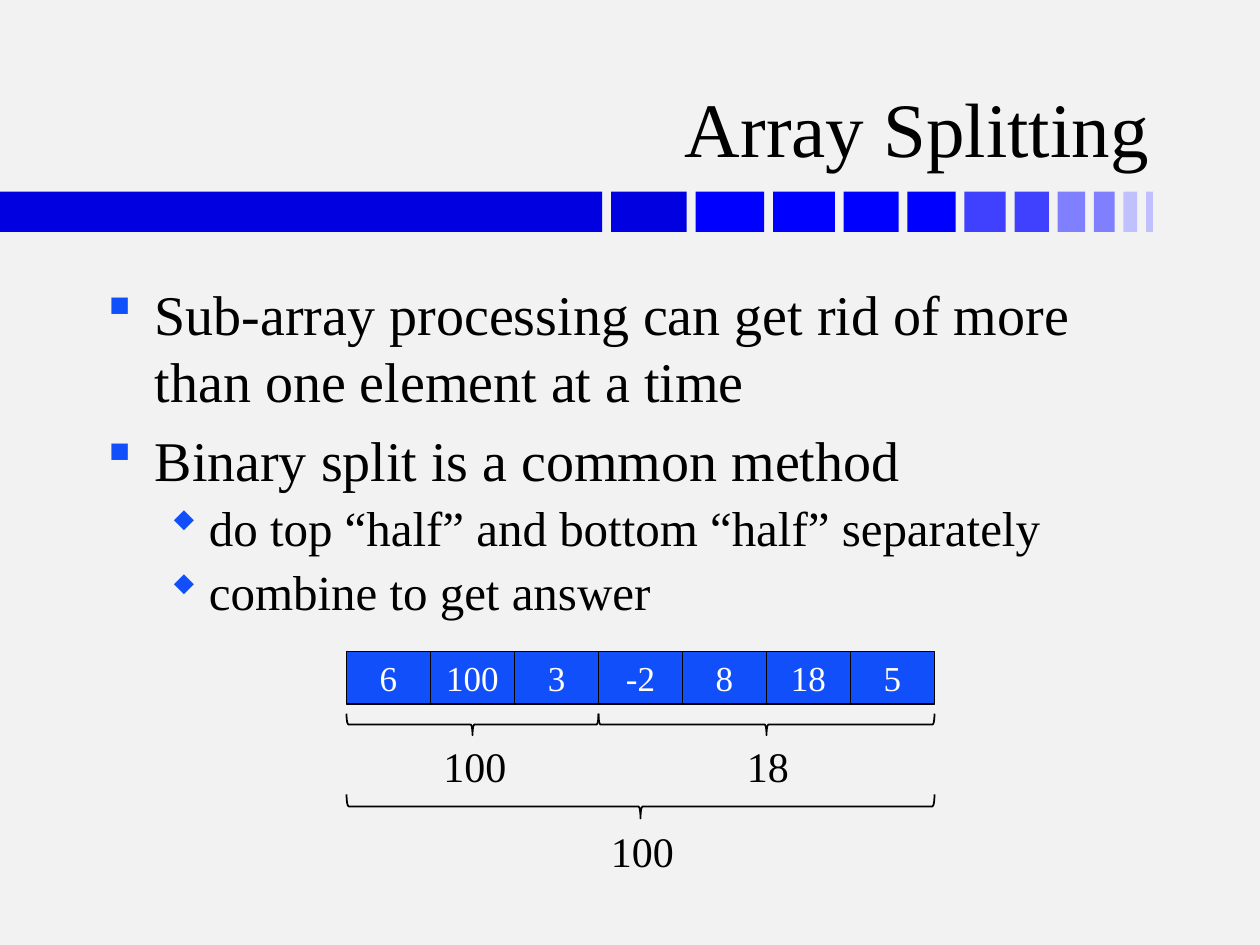
import pptx
import pptx.util
import pptx.dml.color
import pptx.enum.shapes
import pptx.enum.text
import pptx.oxml.ns
import lxml.etree

Inch = pptx.util.Inches
Point = pptx.util.Pt
Shape = pptx.enum.shapes.MSO_SHAPE
Align = pptx.enum.text.PP_ALIGN
Anchor = pptx.enum.text.MSO_ANCHOR

FONT, SYMBOL = "Times New Roman", "Wingdings"
BLACK, WHITE, BLUE, GREY = "000000", "FFFFFF", "114FFB", "F2F2F2"
FADE = ["C0C0FF", "8080FF", "4040FF", "0000FF", "0000FF", "0000E0"]
CELL, LEFT = 2 / 3, 2.75
VALUES = ["6", "100", "3", "-2", "8", "18", "5"]
BRACES = [(0, 3, 5.75, 0.17), (3, 4, 5.75, 0.17), (0, 7, 6.4, 0.19)]
LABELS = [("100", 3.42, 5.83, 0.71), ("18", 5.83, 5.83, 0.54), ("100", 4.75, 6.5, 0.71)]
POINTS = [
    (0, "Sub-array processing can get rid of more than one element at a time"),
    (0, "Binary split is a common method"),
    (1, "do top “half” and bottom “half” separately"),
    (1, "combine to get answer"),
]
LEVELS = [("§", 32, 0.2, 0.38, 0.38), ("w", 28, 0.1, 0.81, 0.31)]


def paint(form, color):
    form.solid()
    form.fore_color.rgb = pptx.dml.color.RGBColor.from_string(color)


def write(para, text, size, color=BLACK):
    run = para.add_run()
    run.text = text
    run.font.name = FONT
    run.font.size = Point(size)
    paint(run.font.fill, color)


def draw(slide, kind, box, fill=None, line=None):
    shape = slide.shapes.add_shape(kind, *map(Inch, box))
    shape.shadow.inherit = False
    if fill:
        paint(shape.fill, fill)
    else:
        shape.fill.background()
    if line:
        paint(shape.line.fill, line)
        shape.line.width = Point(1)
    else:
        shape.line.fill.background()
    return shape


def frame(slide, box, wrap=True):
    text = slide.shapes.add_textbox(*map(Inch, box)).text_frame
    text.word_wrap = wrap
    return text


def title(slide, text):
    area = frame(slide, (0.74, 0.19, 8.48, 1.23))
    area.vertical_anchor = Anchor.BOTTOM
    para = area.paragraphs[0]
    para.alignment = Align.RIGHT
    write(para, text, 44)


def band(slide, top=1.52, high=0.32, gap=0.07):
    edge = 9.15
    for step in range(1, 12):
        wide = 0.6 * step / 11
        edge -= wide
        draw(slide, Shape.RECTANGLE, (edge, top, wide, high), FADE[(step - 1) // 2])
        edge -= gap
    draw(slide, Shape.RECTANGLE, (0, top, edge, high), FADE[-1])


def bullet(para, mark, left, hang):
    props = para._p.get_or_add_pPr()
    props.set("marL", str(Inch(left)))
    props.set("indent", str(-Inch(hang)))
    name = pptx.oxml.ns.qn
    tint = lxml.etree.SubElement(props, name("a:buClr"))
    lxml.etree.SubElement(tint, name("a:srgbClr")).set("val", BLUE)
    face = lxml.etree.SubElement(props, name("a:buFont"))
    face.set("typeface", SYMBOL)
    face.set("charset", "2")
    lxml.etree.SubElement(props, name("a:buChar")).set("char", mark)


def body(slide):
    area = frame(slide, (0.75, 2.17, 8.5, 4.5))
    for index, (level, text) in enumerate(POINTS):
        para = area.add_paragraph() if index else area.paragraphs[0]
        mark, size, share, left, hang = LEVELS[level]
        para.level = level
        para.space_before = Point(size * share)
        bullet(para, mark, left, hang)
        write(para, text, size)


def cells(slide):
    for col, value in enumerate(VALUES):
        box = (LEFT + col * CELL, 5.17, CELL, 0.42)
        para = draw(slide, Shape.RECTANGLE, box, BLUE, BLACK).text_frame.paragraphs[0]
        para.alignment = Align.CENTER
        write(para, value, 20, WHITE)


def brace(slide, col, count, mid, thick):
    span = count * CELL
    heart = LEFT + col * CELL + span / 2
    box = (heart - thick / 2, mid - span / 2, thick, span)
    draw(slide, Shape.RIGHT_BRACE, box, line=BLACK).rotation = 90


def label(slide, text, left, top, wide):
    area = frame(slide, (left, top, wide, 0.51), False)
    write(area.paragraphs[0], text, 24)


def main():
    deck = pptx.Presentation()
    deck.slide_width, deck.slide_height = Inch(10), Inch(7.5)
    slide = deck.slides.add_slide(deck.slide_layouts[6])
    paint(slide.background.fill, GREY)
    band(slide)
    title(slide, "Array Splitting")
    body(slide)
    cells(slide)
    for item in BRACES:
        brace(slide, *item)
    for item in LABELS:
        label(slide, *item)
    deck.save("out.pptx")


if __name__ == "__main__":
    main()
